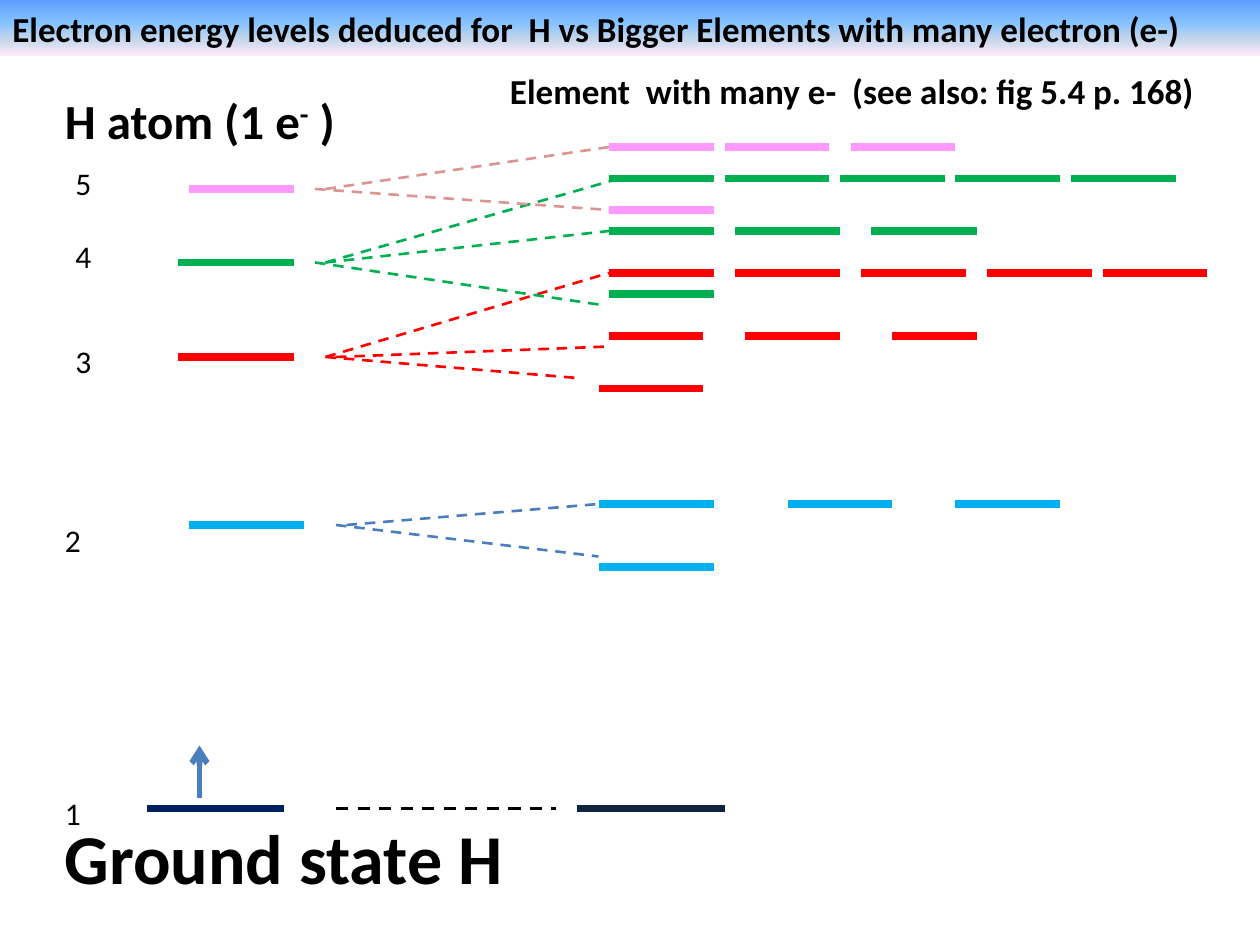
from copy import deepcopy

from pptx import Presentation
from pptx.dml.color import RGBColor
from pptx.enum.dml import MSO_LINE
from pptx.enum.shapes import MSO_CONNECTOR, MSO_SHAPE
from pptx.enum.text import MSO_ANCHOR, PP_ALIGN
from pptx.oxml.ns import qn
from pptx.oxml.xmlchemy import OxmlElement
from pptx.util import Pt

BLACK = RGBColor(0x00, 0x00, 0x00)
NAVY = RGBColor(0x00, 0x20, 0x60)
INK = RGBColor(0x0F, 0x24, 0x3E)
SKY = RGBColor(0x00, 0xB0, 0xF0)
RED = RGBColor(0xFF, 0x00, 0x00)
GREEN = RGBColor(0x00, 0xB0, 0x50)
PINK = RGBColor(0xFF, 0x99, 0xFF)
ROSE = RGBColor(0xD9, 0x96, 0x94)
BLUE = RGBColor(0x4B, 0x7E, 0xBC)
FADE = [
    (0, RGBColor(0x5E, 0x9E, 0xFF)),
    (0.4, RGBColor(0x85, 0xC2, 0xFF)),
    (0.7, RGBColor(0xC4, 0xD6, 0xEB)),
    (1, RGBColor(0xFF, 0xEB, 0xFA)),
]

SHELLS = [
    ("1", 0, 402, NAVY, 54, 132, 414),
    ("2", 0, 246, SKY, 78, 144, 252),
    ("3", 6, 144, RED, 72, 138, 156),
    ("4", 6, 84, GREEN, 72, 138, 102),
    ("5", 6, 42, PINK, 78, 138, 60),
]
ROWS = [
    (INK, 426, [54], [84]),
    (SKY, 288, [66], [66]),
    (SKY, 252, [66, 174, 270], [66, 60, 60]),
    (RED, 186, [66], [60]),
    (RED, 156, [72, 150, 234], [54, 54, 48]),
    (RED, 120, [72, 144, 216, 288, 354], [60] * 5),
    (GREEN, 132, [72], [60]),
    (GREEN, 96, [72, 144, 222], [60] * 3),
    (GREEN, 66, [72, 138, 204, 270, 336], [60] * 5),
    (PINK, 84, [72], [60]),
    (PINK, 48, [72, 138, 210], [60] * 3),
]
SPLITS = [
    (BLUE, 216, [(12, 162, 234), (18, 162, 204)], 1.5),
    (RED, 120, [(6, 150, 132), (12, 168, 114), (6, 168, 72)], 1.5),
    (GREEN, 66, [(0, 162, 90), (6, 168, 48), (6, 174, 18)], 1.5),
    (ROSE, 24, [(0, 168, 36), (6, 168, 0)], 1.5),
    (BLACK, 378, [(12, 138, 378)], 1.75),
]


def set_all(obj, vals):
    """Set each named value on an object."""
    for name, val in vals.items():
        setattr(obj, name, val)


def write(shape, runs, size, bold=True, left=7.2, anchor=MSO_ANCHOR.TOP):
    """Write one left-aligned line of runs and return the runs."""
    frame = shape.text_frame
    set_all(frame, {"word_wrap": True, "margin_left": Pt(left),
                    "vertical_anchor": anchor})
    para = frame.paragraphs[0]
    para.alignment = PP_ALIGN.LEFT
    made = []
    for text in runs:
        run = para.add_run()
        run.text = text
        set_all(run.font, {"name": "Calibri", "size": Pt(size), "bold": bold})
        run.font.color.rgb = BLACK
        made.append(run)
    return made


def label(slide, box, runs, size, **style):
    """Add a text box and return its runs."""
    shape = slide.shapes.add_textbox(*map(Pt, box))
    return write(shape, runs, size, **style)


def line(slide, ends, color, width, dash=None):
    """Draw a plain straight line."""
    link = slide.shapes.add_connector(MSO_CONNECTOR.STRAIGHT, *map(Pt, ends))
    link.line.color.rgb = color
    set_all(link.line, {"width": Pt(width), "dash_style": dash})
    link._element.spPr.append(OxmlElement("a:effectLst"))
    return link


def banner(slide, box):
    """Draw the title on its gradient band."""
    band = slide.shapes.add_shape(MSO_SHAPE.RECTANGLE, *map(Pt, box))
    band.shadow.inherit = False
    band.line.fill.background()
    band.fill.gradient()
    band.fill.gradient_angle = 270
    stops = band._element.spPr.find(qn("a:gradFill")).find(qn("a:gsLst"))
    for _ in FADE[2:]:
        stops.append(deepcopy(stops[0]))
    for stop, (spot, color) in zip(band.fill.gradient_stops, FADE):
        stop.position = spot
        stop.color.rgb = color
    title = ("Electron energy levels deduced for  H vs Bigger Elements "
             "with many electron (e-)")
    write(band, [title], 20, anchor=MSO_ANCHOR.MIDDLE)


def atom(slide, box):
    """Draw the numbered hydrogen levels and their headings."""
    x, y, w, h = box
    runs = label(slide, (x, y, 192, 41), ["H atom (1 e", "-", " )"], 28)
    runs[1].font._element.set("baseline", "30000")
    label(slide, (x, y + h - 55, w, 55), ["Ground state H"], 40)
    for num, left, top, color, start, end, level in SHELLS:
        label(slide, (x + left, y + top, 30, 30), [num], 18, bold=False)
        line(slide, (x + start, y + level, x + end, y + level), color, 4.5)
    jump = line(slide, (x + 84, y + 408, x + 84, y + 378), BLUE, 3.25)
    tail = OxmlElement("a:tailEnd")
    tail.set("type", "arrow")
    jump.line._get_or_add_ln().append(tail)


def element(slide, box):
    """Draw the sublevels of an element with many electrons."""
    x, y, w, h = box
    head = "Element  with many e-  (see also: fig 5.4 p. 168)"
    label(slide, (x, y, w, 32), [head], 20, left=15.4)
    for color, level, starts, widths in ROWS:
        for start, width in zip(starts, widths):
            left = x + start
            line(slide, (left, y + level, left + width, y + level), color, 4.5)


def splits(slide, box):
    """Draw the dashed fans from levels to sublevels."""
    x, y, w, h = box
    for color, level, fan, width in SPLITS:
        for start, end, drop in fan:
            ends = (x + start, y + level, x + end, y + drop)
            line(slide, ends, color, width, MSO_LINE.DASH)


def main():
    """Build and save the slide."""
    deck = Presentation()
    set_all(deck, {"slide_width": Pt(720), "slide_height": Pt(540)})
    slide = deck.slides.add_slide(deck.slide_layouts[6])
    atom(slide, (30, 48, 294, 469))
    element(slide, (276, 36, 444, 432))
    banner(slide, (0, 0, 720, 32))
    splits(slide, (180, 84, 174, 378))
    deck.save("out.pptx")


if __name__ == "__main__":
    main()
